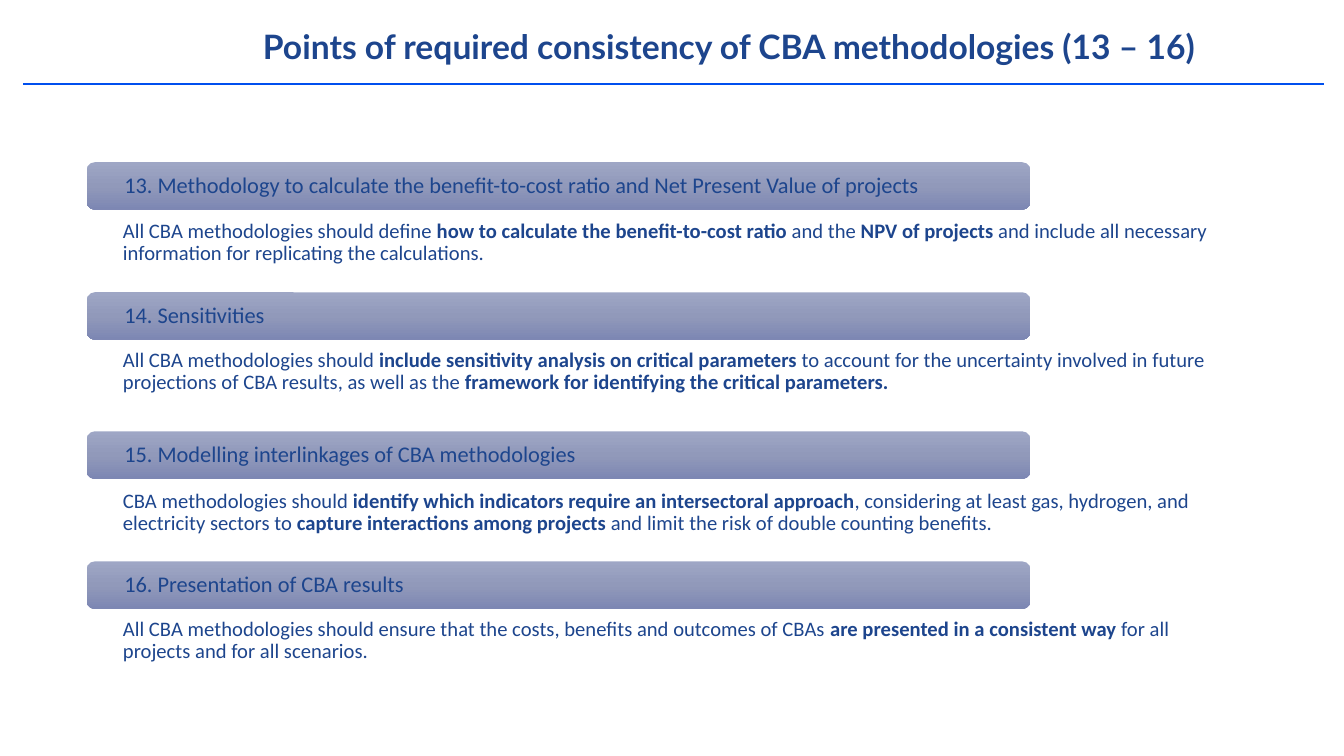
"""Build the slide on required consistency of CBA methodologies, points 13 to 16."""
from copy import deepcopy
from dataclasses import dataclass

from lxml.etree import SubElement
from pptx import Presentation
from pptx.dml.color import RGBColor
from pptx.enum.shapes import MSO_CONNECTOR, MSO_SHAPE
from pptx.enum.text import MSO_ANCHOR, PP_ALIGN
from pptx.oxml.ns import qn
from pptx.util import Pt

PX = 9144


@dataclass(frozen=True)
class Theme:
    ink: str = "1D458D"
    rule: str = "004FEE"
    paper: str = "FFFFFF"
    shades: tuple = ((0, "9EA6C5"), (0.5, "9199BA"), (1, "7D87B3"))
    title: float = 24
    head: float = 16
    body: float = 14.7


theme = Theme()


def place(left, top, width, height):
    return [n * PX for n in (left, top, width, height)]


def write(shape, text, size, font, pads, anchor, space):
    frame = shape.text_frame
    frame.word_wrap = True
    frame.vertical_anchor = anchor
    frame.margin_left = frame.margin_right = pads[0] * PX
    frame.margin_top, frame.margin_bottom = pads[1] * PX, pads[2] * PX
    para = frame.paragraphs[0]
    para.alignment = PP_ALIGN.LEFT
    para.line_spacing = space
    for i, part in enumerate(text.split("*")):
        run = para.add_run()
        run.text = part
        run.font.size = Pt(size)
        run.font.name = font
        run.font.bold = i % 2 == 1
        run.font.color.rgb = RGBColor.from_string(theme.ink)


points = [
    (161, 186, "13. Methodology to calculate the benefit-to-cost ratio and Net Present Value of projects",
     "All CBA methodologies should define *how to calculate the benefit-to-cost ratio *and the "
     "*NPV of projects *and include all necessary information for replicating the calculations."),
    (290, 314, "14. Sensitivities",
     "All CBA methodologies should *include sensitivity analysis on critical parameters *to account "
     "for the uncertainty involved in future projections of CBA results, as well as the "
     "*framework for identifying the critical parameters."),
    (428, 454, "15. Modelling interlinkages of CBA methodologies",
     "CBA methodologies should *identify which indicators require an intersectoral approach*, "
     "considering at least gas, hydrogen, and electricity sectors to "
     "*capture interactions among projects *and limit the risk of double counting benefits."),
    (557, 581, "16. Presentation of CBA results",
     "All CBA methodologies should ensure that the costs, benefits and outcomes of CBAs "
     "*are presented in a consistent way *for all projects and for all scenarios."),
]

deck = Presentation()
deck.slide_width, deck.slide_height = 1333 * PX, 750 * PX
slide = deck.slides.add_slide(deck.slide_layouts[6])
shapes = slide.shapes

rule = shapes.add_connector(MSO_CONNECTOR.STRAIGHT, 23 * PX, 83 * PX, 1313 * PX, 83 * PX)
rule.line.color.rgb = RGBColor.from_string(theme.rule)
rule.line.width = Pt(1.5)
SubElement(rule._element.spPr, qn("a:effectLst"))

title = shapes.add_textbox(*place(251, 17, 1062, 64))
write(title, "*Points of required consistency of CBA methodologies (13 – 16)",
      theme.title, "Lato", (10, 5, 5), MSO_ANCHOR.TOP, 1.1)
title.text_frame.paragraphs[0].space_after = Pt(4)

for top, low, head, body in points:
    panel = shapes.add_shape(MSO_SHAPE.RECTANGLE, *place(21, low, 1300, 91))
    panel.shadow.inherit = False
    panel.fill.solid()
    panel.fill.fore_color.rgb = RGBColor.from_string(theme.paper)
    tint = panel._element.spPr.find(qn("a:solidFill"))[0]
    SubElement(tint, qn("a:alpha"), val="90000")
    panel.line.color.rgb = RGBColor.from_string(theme.paper)
    panel.line.width = Pt(0.5)
    write(panel, body, theme.body, "Calibri", (101, 33, 11), MSO_ANCHOR.TOP, 0.9)

    bar = shapes.add_shape(MSO_SHAPE.ROUNDED_RECTANGLE, *place(86, top, 936, 47))
    bar.adjustments[0] = 0.17
    bar.shadow.inherit = False
    bar.line.fill.background()
    bar.fill.gradient()
    bar.fill.gradient_angle = 270
    stops = bar._element.spPr.find(".//" + qn("a:gsLst"))
    stops.append(deepcopy(stops[0]))
    for stop, (spot, shade) in zip(bar.fill.gradient_stops, theme.shades):
        stop.position = spot
        stop.color.rgb = RGBColor.from_string(shade)
    write(bar, head, theme.head, "Calibri", (35, 2, 2), MSO_ANCHOR.MIDDLE, 0.9)

deck.save("out.pptx")
